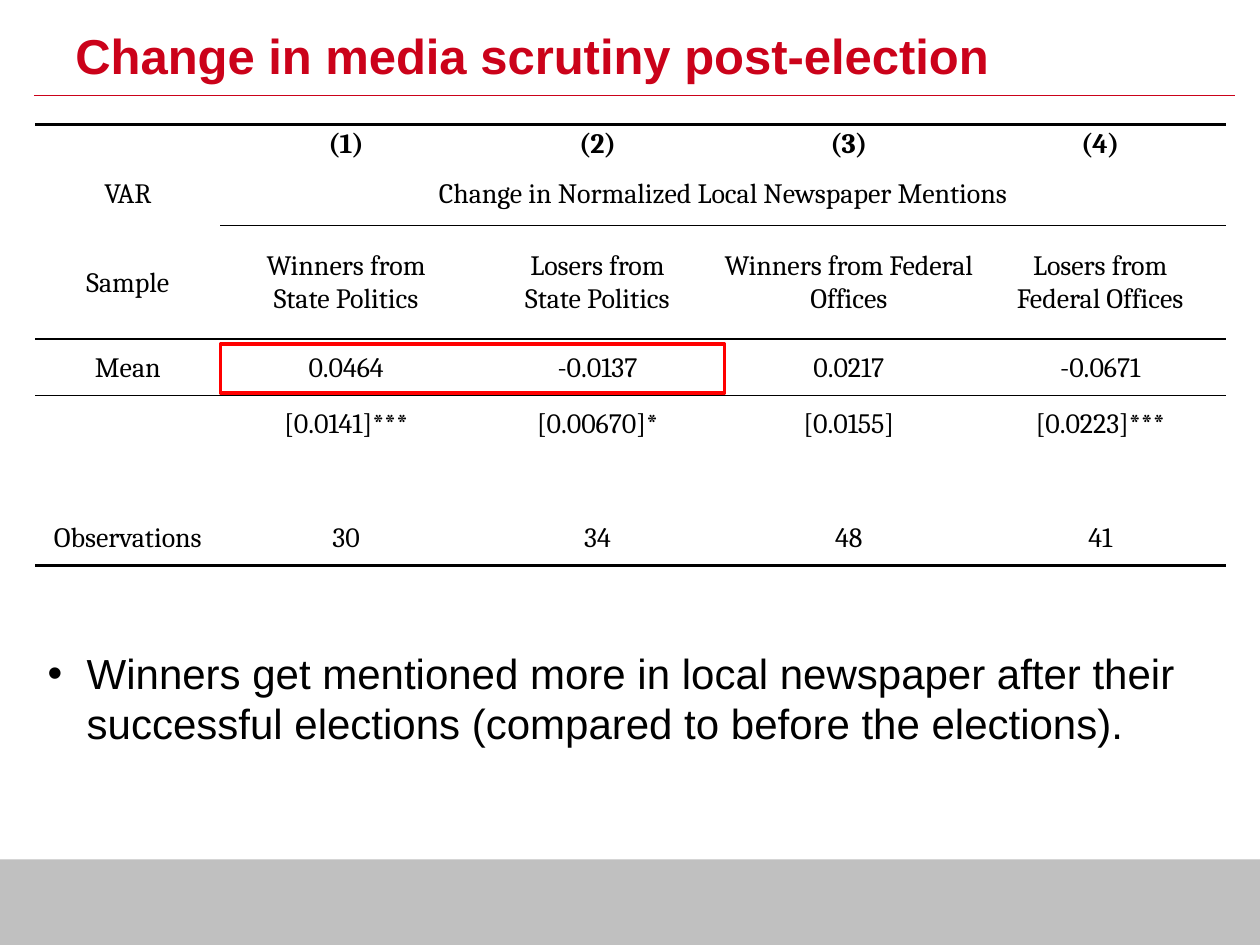
from dataclasses import dataclass

from lxml.etree import SubElement
from pptx import Presentation
from pptx.dml.color import RGBColor
from pptx.enum.shapes import MSO_CONNECTOR, MSO_SHAPE
from pptx.enum.text import MSO_ANCHOR, PP_ALIGN
from pptx.oxml.ns import qn
from pptx.util import Inches, Pt


@dataclass(frozen=True)
class Theme:
    red = RGBColor(0xCB, 0x02, 0x1A)
    highlight = RGBColor(0xFF, 0x00, 0x00)
    black = RGBColor(0x00, 0x00, 0x00)
    footer = RGBColor(0xC0, 0xC0, 0xC0)
    sans = "Arial"
    serif = "Cambria"
    title_size = Pt(28)
    body_size = Pt(24)
    table_size = Pt(16)
    thin = Pt(1)
    thick = Pt(2.25)


THEME = Theme()
PLAIN_TABLE_STYLE = "{2D5ABB26-0587-4C30-8999-92F81FD0307C}"
COLUMN_WIDTHS = [1.47] + [1.995] * 4
ROW_HEIGHTS = [0.3, 0.5, 0.9] + [0.45] * 4
RESULTS = [
    ["", "(1)", "(2)", "(3)", "(4)"],
    ["VAR", "Change in Normalized Local Newspaper Mentions", "", "", ""],
    ["Sample", "Winners from\nState Politics", "Losers from\nState Politics",
     "Winners from Federal Offices", "Losers from\nFederal Offices"],
    ["Mean", "0.0464", "-0.0137", "0.0217", "-0.0671"],
    ["", "[0.0141]***", "[0.00670]*", "[0.0155]", "[0.0223]***"],
    [""] * 5,
    ["Observations", "30", "34", "48", "41"],
]


def style_font(para, name, size, color, bold=False):
    font = para.font
    font.name, font.size, font.bold = name, size, bold
    font.color.rgb = color


def add_text(page, left, top, width, height, text):
    box = page.shapes.add_textbox(Inches(left), Inches(top), Inches(width), Inches(height))
    box.text_frame.word_wrap = True
    box.text_frame.text = text
    return box.text_frame


def add_title(page, left, top, width, height, text):
    frame = add_text(page, left, top, width, height, text)
    frame.vertical_anchor = MSO_ANCHOR.MIDDLE
    style_font(frame.paragraphs[0], THEME.sans, THEME.title_size, THEME.red, bold=True)


def add_title_rule(page, left, top, width):
    rule = page.shapes.add_connector(
        MSO_CONNECTOR.STRAIGHT, Inches(left), Inches(top), Inches(left + width), Inches(top))
    rule.line.color.rgb = THEME.red
    rule.line.width = Pt(0.75)
    SubElement(rule._element.spPr, qn("a:effectLst"))


def add_rectangle(page, left, top, width, height, fill=None, line=None):
    box = page.shapes.add_shape(
        MSO_SHAPE.RECTANGLE, Inches(left), Inches(top), Inches(width), Inches(height))
    box.shadow.inherit = False
    if fill is None:
        box.fill.background()
    else:
        box.fill.solid()
        box.fill.fore_color.rgb = fill
    if line is None:
        box.line.fill.background()
    else:
        box.line.color.rgb = line
        box.line.width = Pt(2)


def add_border(cell, side, width):
    """Draw one side of a cell: lnT for the top, lnB for the bottom."""
    border = SubElement(cell._tc.get_or_add_tcPr(), qn(f"a:{side}"), w=str(width))
    solid = SubElement(border, qn("a:solidFill"))
    SubElement(solid, qn("a:srgbClr"), val=str(THEME.black))


def fill_cell(cell, text, bold):
    cell.margin_left = cell.margin_top = cell.margin_right = Inches(0.01)
    cell.margin_bottom = 0
    cell.vertical_anchor = MSO_ANCHOR.MIDDLE
    cell.text = text
    for para in cell.text_frame.paragraphs:
        para.alignment = PP_ALIGN.CENTER
        style_font(para, THEME.serif, THEME.table_size, THEME.black, bold)
        if not text:
            SubElement(para._p, qn("a:endParaRPr"), sz=str(int(THEME.table_size.pt * 100)))


def add_results_table(page, left, top):
    table = page.shapes.add_table(
        len(RESULTS), len(COLUMN_WIDTHS), Inches(left), Inches(top),
        Inches(sum(COLUMN_WIDTHS)), Inches(sum(ROW_HEIGHTS))).table
    table.first_row = table.horz_banding = False
    table._tbl.tblPr.find(qn("a:tableStyleId")).text = PLAIN_TABLE_STYLE
    for column, width in zip(table.columns, COLUMN_WIDTHS):
        column.width = Inches(width)
    for row, height in zip(table.rows, ROW_HEIGHTS):
        row.height = Inches(height)
    table.cell(1, 1).merge(table.cell(1, 4))

    top_rules = {0: THEME.thick, 3: THEME.thin}
    bottom_rules = {2: THEME.thin, len(RESULTS) - 1: THEME.thick}
    for row, texts in enumerate(RESULTS):
        for column, text in enumerate(texts):
            cell = table.cell(row, column)
            fill_cell(cell, text, bold=row == 0)
            under_heading = column > 0
            if row in top_rules or (row == 2 and under_heading):
                add_border(cell, "lnT", top_rules.get(row, THEME.thin))
            if row in bottom_rules or (row == 1 and under_heading):
                add_border(cell, "lnB", bottom_rules.get(row, THEME.thin))
            cell.fill.background()


def add_bullet(page, left, top, width, height, text):
    para = add_text(page, left, top, width, height, text).paragraphs[0]
    properties = para._p.get_or_add_pPr()
    properties.set("marL", str(Inches(0.31)))
    properties.set("indent", str(-Inches(0.31)))
    SubElement(properties, qn("a:buFont"), typeface=THEME.sans)
    SubElement(properties, qn("a:buChar"), char="•")
    style_font(para, THEME.sans, THEME.body_size, THEME.black)


def build_results_slide(deck):
    page = deck.slides.add_slide(deck.slide_layouts[6])
    add_rectangle(page, 0, 6.82, 10, 0.68, fill=THEME.footer)
    add_title_rule(page, 0.27, 0.76, 9.53)
    add_title(page, 0.5, 0.13, 9, 0.61, "Change in media scrutiny post-election")
    add_results_table(page, 0.28, 0.99)
    add_bullet(page, 0.28, 5.09, 9.42, 0.71,
               "Winners get mentioned more in local newspaper after their "
               "successful elections (compared to before the elections).")
    add_rectangle(page, 1.75, 2.73, 4, 0.39, line=THEME.highlight)


def main():
    deck = Presentation()
    deck.slide_width, deck.slide_height = Inches(10), Inches(7.5)
    build_results_slide(deck)
    deck.save("out.pptx")


if __name__ == "__main__":
    main()
